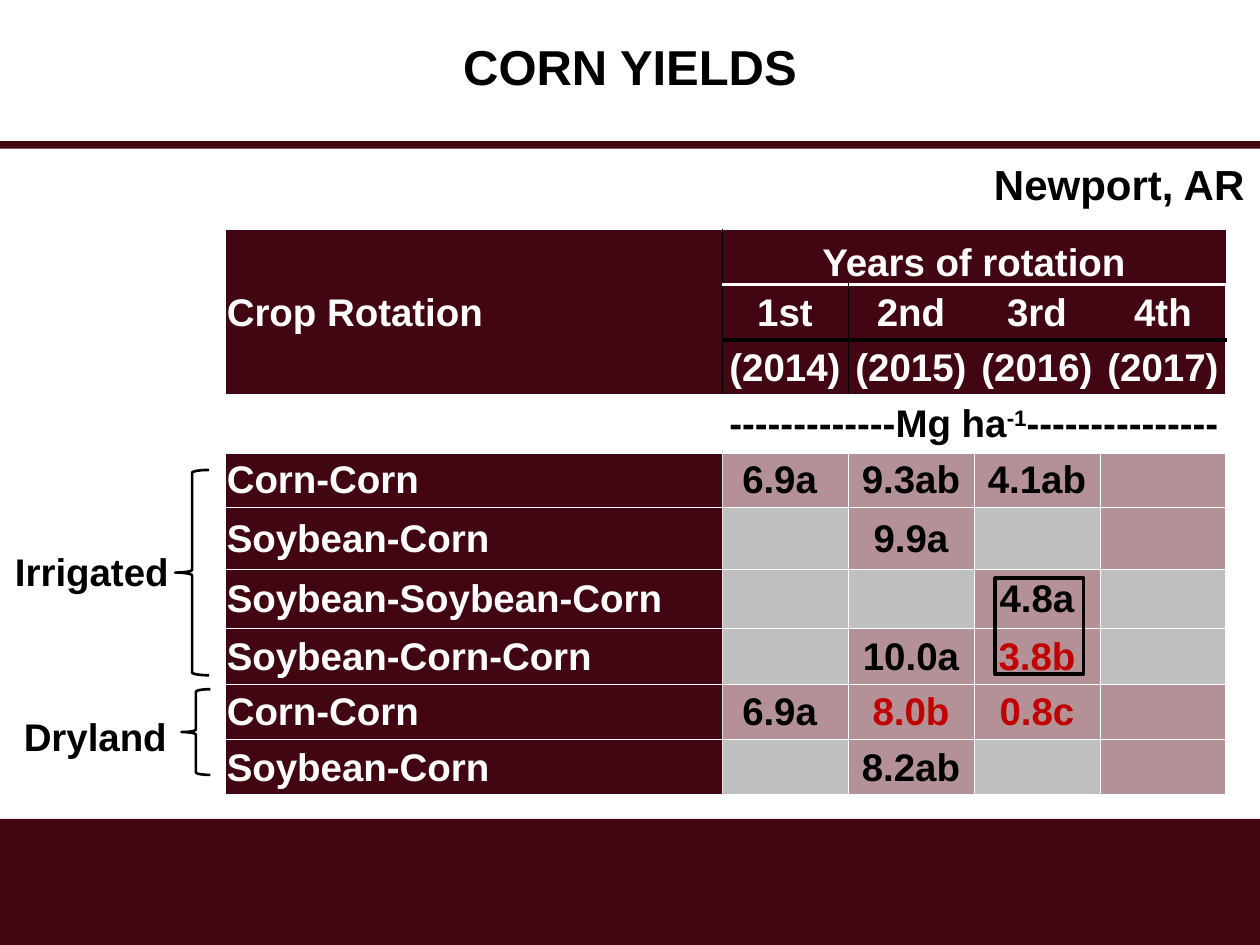
from dataclasses import dataclass

from lxml import etree
from pptx import Presentation
from pptx.dml.color import RGBColor
from pptx.enum.shapes import MSO_SHAPE
from pptx.enum.text import MSO_ANCHOR, MSO_AUTO_SIZE, PP_ALIGN
from pptx.oxml.ns import qn
from pptx.util import Inches, Pt

LEFT, CENTER = PP_ALIGN.LEFT, PP_ALIGN.CENTER
MIDDLE, BOTTOM = MSO_ANCHOR.MIDDLE, MSO_ANCHOR.BOTTOM
RECTANGLE, LEFT_BRACE = MSO_SHAPE.RECTANGLE, MSO_SHAPE.LEFT_BRACE
PLAIN_TABLE_STYLE = "{2D5ABB26-0587-4C30-8999-92F81FD0307C}"


@dataclass(frozen=True)
class Theme:
    font: str = "Arial"
    maroon: str = "410611"
    rose: str = "B39197"
    gray: str = "BFBFBF"
    black: str = "000000"
    white: str = "FFFFFF"
    pale: str = "E2E4DB"
    red: str = "C00000"
    title_size: int = 28
    place_size: int = 24
    body_size: int = 22


THEME = Theme()

COLUMN_WIDTHS = [3.94, 1, 1, 1, 1]
ROW_HEIGHTS = [0.44, 0.44, 0.44, 0.45, 0.44, 0.49, 0.47, 0.44, 0.44, 0.44]
YEARS = [("1st", "(2014)"), ("2nd", "(2015)"), ("3rd", "(2016)"), ("4th", "(2017)")]
UNIT_ROW = 3
# None is a year without corn; an empty text is a corn year without a value.
YIELDS = [
    ("Corn-Corn", "6.9a ", "9.3ab", "4.1ab", ""),
    ("Soybean-Corn", None, "9.9a", None, ""),
    ("Soybean-Soybean-Corn", None, None, "4.8a", None),
    ("Soybean-Corn-Corn", None, "10.0a", "3.8b", None),
    ("Corn-Corn", "6.9a ", "8.0b", "0.8c", ""),
    ("Soybean-Corn", None, "8.2ab", None, ""),
]
LOW_YIELDS = {"3.8b", "8.0b", "0.8c"}


def rgb(color):
    return RGBColor.from_string(color)


def write_text(frame, text, *, size=THEME.body_size, color=THEME.black,
               align=LEFT, line_spacing=None, superscript="", tail=""):
    """Fill the first paragraph with text, then an optional superscript and tail."""
    paragraph = frame.paragraphs[0]
    paragraph.alignment = align
    if line_spacing:
        paragraph.line_spacing = line_spacing
    for part in filter(None, (text, superscript, tail)):
        run = paragraph.add_run()
        run.text = part
        run.font.name = THEME.font
        run.font.size = Pt(size)
        run.font.bold = True
        run.font.color.rgb = rgb(color)
        if part == superscript:
            run.font._element.set("baseline", "30000")


def add_text(shapes, box, text, *, wrap=True, anchor=None, **text_format):
    text_box = shapes.add_textbox(*map(Inches, box))
    frame = text_box.text_frame
    frame.word_wrap = wrap
    if anchor is None:
        frame.auto_size = MSO_AUTO_SIZE.SHAPE_TO_FIT_TEXT
    else:
        frame.vertical_anchor = anchor
    write_text(frame, text, **text_format)


def add_bar(shapes, box):
    bar = shapes.add_shape(RECTANGLE, *map(Inches, box))
    bar.shadow.inherit = False
    bar.fill.solid()
    bar.fill.fore_color.rgb = rgb(THEME.maroon)
    bar.line.fill.background()


def add_outline(shapes, kind, box, width):
    outline = shapes.add_shape(kind, *map(Inches, box))
    outline.shadow.inherit = False
    outline.fill.background()
    outline.line.color.rgb = rgb(THEME.black)
    outline.line.width = Pt(width)


def add_braced_label(slide, text, text_box, brace_box):
    group = slide.shapes.add_group_shape()
    add_outline(group.shapes, LEFT_BRACE, brace_box, 1.5)
    add_text(group.shapes, text_box, text)


def horizontal_edge(edge, column):
    """Color and width of the line above row number edge, or None."""
    if edge in (0, len(ROW_HEIGHTS)):
        return THEME.white, 0.75
    if edge < UNIT_ROW and column == 0:
        return None
    if edge == 2:
        return THEME.black, 2.25
    return THEME.white, 2.25 if edge <= UNIT_ROW + 1 else 0.25


def vertical_edge(edge, row):
    """Color and width of the line left of column number edge, or None."""
    if edge in (0, len(COLUMN_WIDTHS)):
        return THEME.white, 0.75
    if edge == 1 and row != UNIT_ROW:
        return (THEME.black if row < UNIT_ROW else THEME.pale), 0.25
    return (THEME.white, 0.25) if row > UNIT_ROW else None


def set_borders(cell, row, column):
    edges = {
        "a:lnL": vertical_edge(column, row),
        "a:lnR": vertical_edge(column + 1, row),
        "a:lnT": horizontal_edge(row, column),
        "a:lnB": horizontal_edge(row + 1, column),
    }
    properties = cell._tc.get_or_add_tcPr()
    for tag, edge in edges.items():
        if edge:
            color, width = edge
            line = etree.SubElement(properties, qn(tag), w=str(Pt(width)))
            fill = etree.SubElement(line, qn("a:solidFill"))
            etree.SubElement(fill, qn("a:srgbClr"), val=color)


def cell_fill(row, column):
    if row == UNIT_ROW:
        return None
    if row < UNIT_ROW or column == 0:
        return THEME.maroon
    return THEME.gray if YIELDS[row - UNIT_ROW - 1][column] is None else THEME.rose


def format_cell(cell, row, column):
    cell.margin_left = cell.margin_right = cell.margin_top = Inches(0.01)
    cell.margin_bottom = 0
    cell.vertical_anchor = MIDDLE
    set_borders(cell, row, column)
    fill = cell_fill(row, column)
    if fill:
        cell.fill.solid()
        cell.fill.fore_color.rgb = rgb(fill)
    else:
        cell.fill.background()


def write_header(table):
    table.cell(0, 0).merge(table.cell(2, 0))
    table.cell(0, 1).merge(table.cell(0, 4))
    table.cell(UNIT_ROW, 1).merge(table.cell(UNIT_ROW, 4))
    write_text(table.cell(0, 0).text_frame, "Crop Rotation", color=THEME.white)
    write_text(table.cell(0, 1).text_frame, "Years of rotation",
               color=THEME.white, align=CENTER)
    table.cell(0, 1).vertical_anchor = BOTTOM
    for column, labels in enumerate(YEARS, 1):
        for row, label in enumerate(labels, 1):
            write_text(table.cell(row, column).text_frame, label,
                       color=THEME.white, align=CENTER)
    write_text(table.cell(UNIT_ROW, 1).text_frame, "-------------Mg ha",
               superscript="-1", tail="---------------", align=CENTER)


def write_yields(table):
    for row, (rotation, *values) in enumerate(YIELDS, UNIT_ROW + 1):
        write_text(table.cell(row, 0).text_frame, rotation, color=THEME.white)
        for column, value in enumerate(values, 1):
            if value:
                color = THEME.red if value in LOW_YIELDS else THEME.black
                write_text(table.cell(row, column).text_frame, value,
                           color=color, align=CENTER)


def add_yield_table(slide):
    size = sum(COLUMN_WIDTHS), sum(ROW_HEIGHTS)
    table = slide.shapes.add_table(len(ROW_HEIGHTS), len(COLUMN_WIDTHS),
                                   *map(Inches, (1.79, 1.82, *size))).table
    table._tbl.tblPr.find(qn("a:tableStyleId")).text = PLAIN_TABLE_STYLE
    table.horz_banding = False
    for column, width in zip(table.columns, COLUMN_WIDTHS):
        column.width = Inches(width)
    for row, height in zip(table.rows, ROW_HEIGHTS):
        row.height = Inches(height)
    for row in range(len(ROW_HEIGHTS)):
        for column in range(len(COLUMN_WIDTHS)):
            format_cell(table.cell(row, column), row, column)
    write_header(table)
    write_yields(table)


def main():
    presentation = Presentation()
    presentation.slide_width, presentation.slide_height = Inches(10), Inches(7.5)
    slide = presentation.slides.add_slide(presentation.slide_layouts[6])
    add_bar(slide.shapes, (0, 6.5, 10, 1))
    heading = slide.shapes.add_group_shape()
    add_text(heading.shapes, (0, 0, 10, 1.11), "CORN YIELDS", anchor=MIDDLE,
             size=THEME.title_size, align=CENTER, line_spacing=0.9)
    add_bar(heading.shapes, (0, 1.12, 10, 0.06))
    add_yield_table(slide)
    add_text(slide.shapes, (7.79, 1.21, 2.21, 0.5), "Newport, AR", wrap=False,
             size=THEME.place_size)
    add_braced_label(slide, "Irrigated", (0.02, 4.3, 1.49, 0.47), (1.39, 3.73, 0.27, 1.63))
    add_braced_label(slide, "Dryland", (0.09, 5.61, 1.35, 0.47), (1.44, 5.47, 0.23, 0.68))
    add_outline(slide.shapes, RECTANGLE, (7.9, 4.59, 0.7, 0.76), 2.25)
    presentation.save("out.pptx")


if __name__ == "__main__":
    main()
